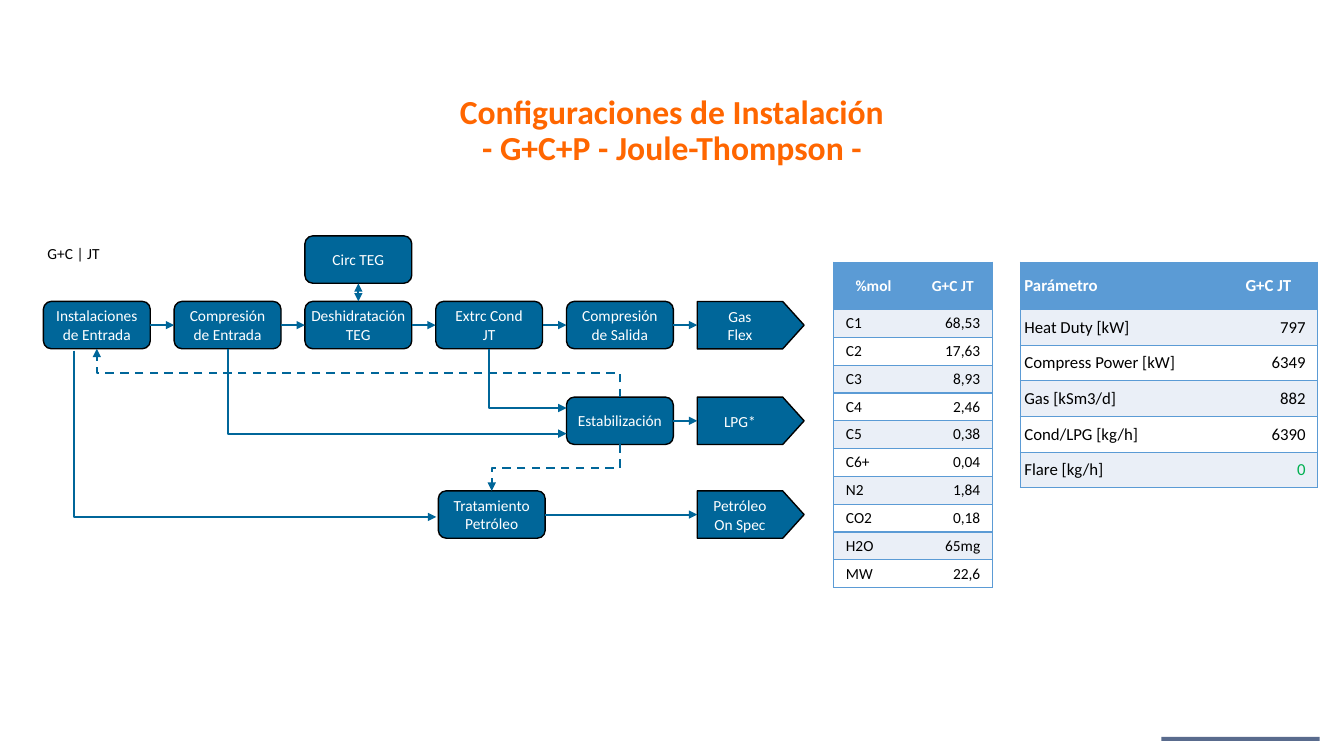
from lxml import etree
from pptx import Presentation
from pptx.dml.color import RGBColor
from pptx.enum.dml import MSO_LINE
from pptx.enum.shapes import MSO_CONNECTOR, MSO_SHAPE
from pptx.enum.text import MSO_ANCHOR, MSO_AUTO_SIZE, PP_ALIGN
from pptx.oxml.ns import qn
from pptx.util import Inches, Pt

LEFT, CENTER, RIGHT = PP_ALIGN.LEFT, PP_ALIGN.CENTER, PP_ALIGN.RIGHT
MIDDLE = MSO_ANCHOR.MIDDLE
STRAIGHT, ELBOW = MSO_CONNECTOR.STRAIGHT, MSO_CONNECTOR.ELBOW
BOX, PENNANT = MSO_SHAPE.FLOWCHART_ALTERNATE_PROCESS, MSO_SHAPE.FLOWCHART_OFFPAGE_CONNECTOR
TOP_SITE, LEFT_SITE, BOTTOM_SITE, RIGHT_SITE = range(4)
TITLE_ONLY = 5

COLORS = {"title": "FF6600", "box": "006699", "black": "000000", "white": "FFFFFF",
          "header": "5B9BD5", "band": "EAEFF7", "good": "00B050", "bar": "001C50"}
FONT = "Calibri"

# Percent of the slide's width or height
FLOW_LEFT, FLOW_STEP = 3.23, 9.73
BOX_WIDTH, BOX_HEIGHT = 7.95, 6.27
ROWS = {"teg": 31.2, "gas": 39.87, "lpg": 52.53, "oil": 64.93}
TABLE_TOP = 34.67

COMPOSITION = [("%mol", "G+C JT"), ("C1", "68,53"), ("C2", "17,63"), ("C3", "8,93"),
               ("C4", "2,46"), ("C5", "0,38"), ("C6+", "0,04"), ("N2", "1,84"),
               ("CO2", "0,18"), ("H2O", "65mg"), ("MW", "22,6")]
PARAMETERS = [("Parámetro", "G+C JT"), ("Heat Duty [kW]", "797"),
              ("Compress Power [kW]", "6349"), ("Gas [kSm3/d]", "882"),
              ("Cond/LPG [kg/h]", "6390"), ("Flare [kg/h]", "0")]


def color(name):
    return RGBColor.from_string(COLORS[name])


def write_text(frame, text, size=11, ink="white", bold=False, align=CENTER, spacing=None):
    """Write one paragraph per line; a vertical tab breaks a line inside a paragraph."""
    frame.word_wrap = True
    for index, line in enumerate(text.split("\n")):
        paragraph = frame.add_paragraph() if index else frame.paragraphs[0]
        paragraph.text = line
        paragraph.alignment = align
        paragraph.line_spacing = spacing
        for run in paragraph.runs:
            run.font.name, run.font.size, run.font.bold = FONT, Pt(size), bold
            run.font.color.rgb = color(ink)


def set_margins(target, left=0.04, right=0.04, edge=0.04):
    target.margin_left, target.margin_right = Inches(left), Inches(right)
    target.margin_top = target.margin_bottom = Inches(edge)


def spot(shape, across, down):
    """Point on a shape, given as shares of its width and height."""
    return (round(shape.left + shape.width * across), round(shape.top + shape.height * down))


def set_borders(cell, sides):
    """Rule the named sides of a cell and clear the others."""
    properties = cell._tc.get_or_add_tcPr()
    for index, side in enumerate("LRTB"):
        line = etree.Element(qn(f"a:ln{side}"), w=str(Pt(1)))
        if side in sides:
            fill = etree.SubElement(line, qn("a:solidFill"))
            etree.SubElement(fill, qn("a:srgbClr"), val=COLORS["header"])
        else:
            etree.SubElement(line, qn("a:noFill"))
        properties.insert(index, line)


class FlowSlide:
    def __init__(self, presentation):
        self.width, self.height = presentation.slide_width, presentation.slide_height
        self.slide = presentation.slides.add_slide(presentation.slide_layouts[TITLE_ONLY])
        self.shapes = self.slide.shapes

    def x(self, percent):
        return round(self.width * percent / 100)

    def y(self, percent):
        return round(self.height * percent / 100)

    def area(self, left, top, width, height):
        return self.x(left), self.y(top), self.x(width), self.y(height)

    def title(self, text, *area):
        shape = self.shapes.title
        shape.left, shape.top, shape.width, shape.height = self.area(*area)
        frame = shape.text_frame
        frame.auto_size, frame.vertical_anchor = MSO_AUTO_SIZE.NONE, MIDDLE
        set_margins(frame, 0.08, 0.08)
        write_text(frame, text, size=24, ink="title", bold=True, spacing=0.9)

    def footer_bar(self, *area):
        shape = self.shapes.add_shape(MSO_SHAPE.RECTANGLE, *self.area(*area))
        shape.shadow.inherit = False
        shape.line.fill.background()
        shape.fill.solid()
        shape.fill.fore_color.rgb = color("bar")
        tint = shape._element.spPr.find(".//" + qn("a:srgbClr"))
        etree.SubElement(tint, qn("a:alpha"), val="65000")

    def step(self, text, column, row, preset=BOX):
        area = self.area(FLOW_LEFT + column * FLOW_STEP, ROWS[row], BOX_WIDTH, BOX_HEIGHT)
        shape = self.shapes.add_shape(preset, *area)
        shape.shadow.inherit = False
        shape.fill.solid()
        shape.fill.fore_color.rgb = color("box")
        shape.line.color.rgb, shape.line.width = color("black"), Pt(1)
        shape.text_frame.vertical_anchor = MIDDLE
        set_margins(shape.text_frame)
        write_text(shape.text_frame, text)
        return shape

    def product(self, text, row, source):
        """Pennant in the last column, turned to point right, with an arrow from its source."""
        shape = self.step(text, 5, row, PENNANT)
        tip = spot(shape, 0, 0.5)
        center_x, center_y = spot(shape, 0.5, 0.5)
        shape.width, shape.height = shape.height, shape.width
        shape.left, shape.top = center_x - shape.width // 2, center_y - shape.height // 2
        shape.rotation = 270
        shape._element.txBody.bodyPr.set("vert", "vert")
        arrow = self.connector(STRAIGHT, *spot(source, 1, 0.5), *tip)
        arrow.begin_connect(source, RIGHT_SITE)

    def connector(self, kind, *ends, dashed=False, ends_marked=("tailEnd",)):
        connector = self.shapes.add_connector(kind, *ends)
        connector.line.color.rgb, connector.line.width = color("box"), Pt(1.5)
        if dashed:
            connector.line.dash_style = MSO_LINE.DASH
        properties = connector._element.spPr
        for end in ends_marked:
            etree.SubElement(properties.find(qn("a:ln")), qn(f"a:{end}"), type="triangle")
        etree.SubElement(properties, qn("a:effectLst"))
        return connector

    def join(self, source, target, begin=RIGHT_SITE, end=LEFT_SITE, **look):
        connector = self.connector(STRAIGHT, 0, 0, 0, 0, **look)
        connector.begin_connect(source, begin)
        connector.end_connect(target, end)

    def elbow(self, start, end, preset="bentConnector2", dashed=False):
        """Bent arrow that leaves its start vertically."""
        (x1, y1), (x2, y2) = start, end
        width, height = abs(y2 - y1), abs(x2 - x1)
        left, top = (x1 + x2 - width) // 2, (y1 + y2 - height) // 2
        connector = self.connector(ELBOW, left, top, left + width, top + height, dashed=dashed)
        properties = connector._element.spPr
        properties.find(qn("a:prstGeom")).set("prst", preset)
        frame = properties.find(qn("a:xfrm"))
        turn = 90 if x2 < x1 and y2 > y1 else 270
        frame.set("rot", str(turn * 60000))
        if turn == 270:
            frame.set("flipH" if y2 > y1 else "flipV", "1")

    def table(self, left, top, widths, heights):
        area = self.area(left, top, sum(widths), sum(heights))
        table = self.shapes.add_table(len(heights), len(widths), *area).table
        table.first_row = table.horz_banding = False
        for column, width in zip(table.columns, widths):
            column.width = self.x(width)
        for row, height in zip(table.rows, heights):
            row.height = self.y(height)
        return table

    def cell(self, cell, text, fill, sides="", margins=(0.04, 0.04), **style):
        cell.fill.solid()
        cell.fill.fore_color.rgb = color(fill)
        cell.vertical_anchor = MIDDLE
        set_margins(cell, *margins)
        set_borders(cell, sides)
        write_text(cell.text_frame, text, **style)

    def data_table(self, rows, left, widths, row_height, size, indent, header_align):
        heights = [BOX_HEIGHT] + [row_height] * (len(rows) - 1)
        table = self.table(left, TABLE_TOP, widths, heights)
        for index, (label, value) in enumerate(rows):
            name, amount = table.cell(index, 0), table.cell(index, 1)
            if index == 0:
                style = dict(fill="header", size=size, bold=True)
                self.cell(name, label, sides="LTB", align=header_align, **style)
                self.cell(amount, value, sides="RTB", **style)
                continue
            style = dict(fill="band" if index % 2 else "white", size=size)
            self.cell(name, label, sides="LTB", margins=(indent, indent), ink="black",
                      align=LEFT, **style)
            self.cell(amount, value, sides="RTB", margins=(indent, 0.12),
                      ink="good" if value == "0" else "black", align=RIGHT, **style)


def main():
    presentation = Presentation()
    presentation.slide_width, presentation.slide_height = Inches(13.33), Inches(7.5)
    page = FlowSlide(presentation)
    page.footer_bar(86.42, 97.47, 11.78, 0.53)
    page.title("Configuraciones de Instalación\v- G+C+P - Joule-Thompson -", 5.7, 12.13, 88.6, 10.53)

    names = ["Instalaciones de Entrada", "Compresión de Entrada", "Deshidratación\nTEG",
             "Extrc Cond\nJT", "Compresión de Salida"]
    train = [page.step(name, column, "gas") for column, name in enumerate(names)]
    inlet, compression, dehydration, extraction, outlet = train
    glycol = page.step("Circ TEG", 2, "teg")
    stabilizer = page.step("Estabilización", 4, "lpg")
    treatment = page.step("Tratamiento Petróleo", 3.02, "oil")

    for source, target in zip(train, train[1:]):
        page.join(source, target)
    page.join(glycol, dehydration, BOTTOM_SITE, TOP_SITE, ends_marked=("headEnd", "tailEnd"))
    page.product("Gas\nFlex", "gas", outlet)
    page.product("LPG*", "lpg", stabilizer)
    page.product("Petróleo\nOn Spec", "oil", treatment)

    page.elbow(spot(compression, 0.5, 1), spot(stabilizer, 0, 0.77))
    page.elbow(spot(extraction, 0.5, 1), spot(stabilizer, 0, 0.23))
    page.elbow(spot(inlet, 0.29, 1.04), spot(treatment, -0.02, 0.55))
    page.elbow(spot(stabilizer, 0.5, 0), spot(inlet, 0.5, 1), "bentConnector3", dashed=True)
    page.elbow(spot(stabilizer, 0.5, 1), spot(treatment, 0.5, 0), "bentConnector3", dashed=True)

    label = page.table(FLOW_LEFT, 31.33, [17.7], [4.67])
    page.cell(label.cell(0, 0), "G+C | JT", "white", ink="black", align=LEFT)
    page.data_table(COMPOSITION, 62.04, [5.9, 5.9], 3.68, 11, 0.12, CENTER)
    page.data_table(PARAMETERS, 75.92, [14.78, 7.35], 4.72, 12, 0.04, LEFT)
    presentation.save("out.pptx")


if __name__ == "__main__":
    main()
